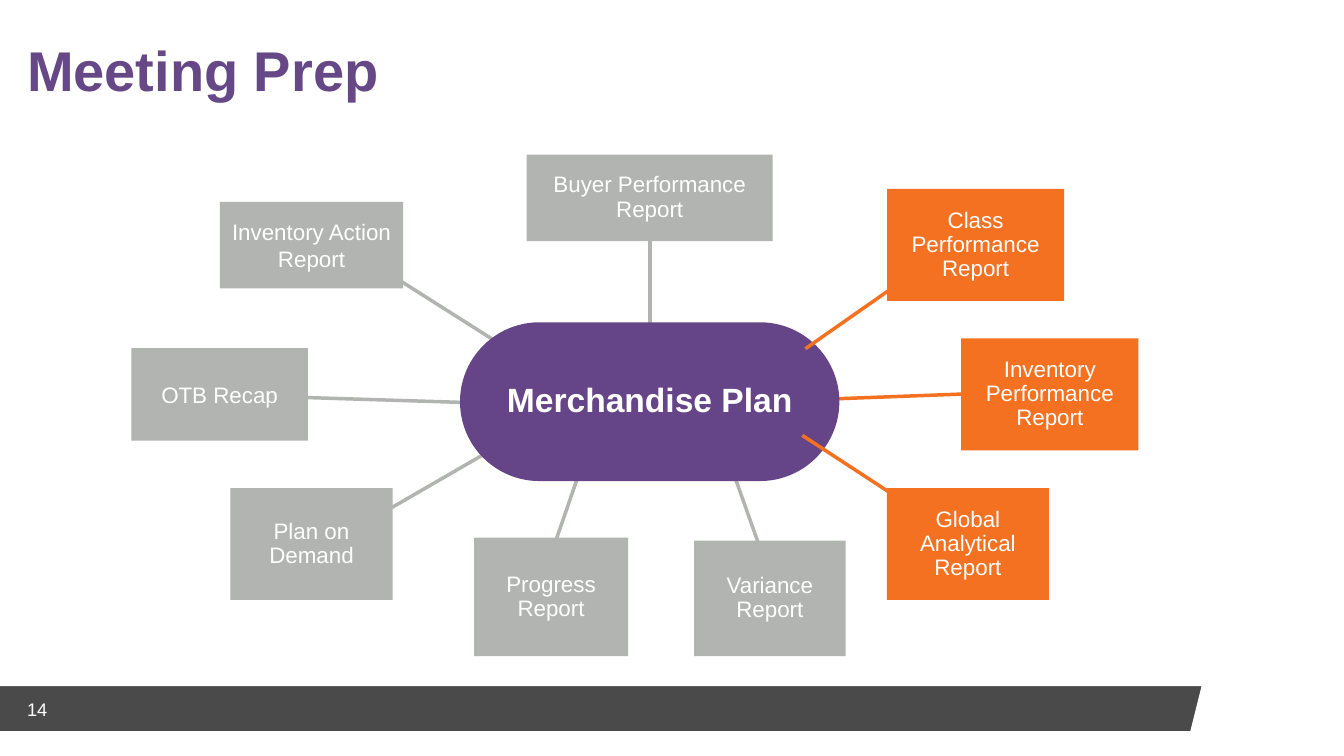
import pptx
import pptx.util
import pptx.dml.color
import pptx.enum.shapes
import pptx.enum.text
import pptx.oxml

Pt = pptx.util.Pt
RGBColor = pptx.dml.color.RGBColor
SHAPE = pptx.enum.shapes.MSO_SHAPE
ALIGN = pptx.enum.text.PP_ALIGN
ANCHOR = pptx.enum.text.MSO_ANCHOR

TITLE_PURPLE = RGBColor(0x66, 0x48, 0x87)
PLAN_PURPLE = RGBColor(0x65, 0x45, 0x87)
ORANGE = RGBColor(0xF3, 0x71, 0x20)
GREY = RGBColor(0xB1, 0xB4, 0xB1)
DARK = RGBColor(0x4A, 0x4A, 0x4A)
WHITE = RGBColor(0xFF, 0xFF, 0xFF)

# Connector ends: x1, y1, x2, y2
GREY_SPOKES = [
    (267, 188.6, 361.4, 248.4),
    (210.2, 283.7, 348.5, 288),
    (255.6, 376.6, 352.8, 320.4),
    (392.4, 399.6, 414, 337),
    (545.8, 399.6, 525.6, 342.7),
    (464.4, 152.6, 464.4, 248.4),
]
ORANGE_SPOKE_BEHIND = (686.9, 281.5, 591.1, 285.1)
ORANGE_SPOKES_FRONT = [
    (643.7, 357.1, 573.1, 311),
    (649.4, 197.3, 575.3, 249.1),
]

# Report boxes: text, colour, (left, top, width, height), line spacing
REPORTS = [
    ("Class Performance Report", ORANGE, (633.6, 135, 126.5, 80), 0.9),
    ("Inventory Performance Report", ORANGE, (686.6, 241.8, 126.5, 80), 0.9),
    ("Global Analytical Report", ORANGE, (633.6, 348.6, 115.6, 80), 0.9),
    ("Variance Report", GREY, (495.8, 386.2, 108.2, 82.6), 0.9),
    ("Progress Report", GREY, (338.6, 384.1, 110, 84.7), 0.9),
    ("Plan on Demand", GREY, (164.6, 348.6, 115.8, 80), 0.9),
    ("Buyer Performance Report", GREY, (376.2, 110.4, 175.8, 61.8), 0.9),
    ("Inventory Action Report", GREY, (157, 144.3, 131, 61.8), 1.0),
    ("OTB Recap", GREY, (93.8, 248.6, 126.2, 66.2), 1.0),
]


def write_text(shape, text, size=16, color=WHITE, bold=False, align=ALIGN.CENTER,
               anchor=ANCHOR.MIDDLE, spacing=0.9, insets=(7.2, 7.2, 7.2, 7.2)):
    frame = shape.text_frame
    frame.word_wrap = True
    frame.auto_size = pptx.enum.text.MSO_AUTO_SIZE.NONE
    frame.vertical_anchor = anchor
    (frame.margin_left, frame.margin_top,
     frame.margin_right, frame.margin_bottom) = [Pt(inset) for inset in insets]
    paragraph = frame.paragraphs[0]
    paragraph.alignment = align
    paragraph.line_spacing = spacing
    run = paragraph.add_run()
    run.text = text
    run.font.name = "Arial"
    run.font.size = Pt(size)
    run.font.bold = bold
    run.font.color.rgb = color


class SlideBuilder:
    def __init__(self, presentation):
        self.slide = presentation.slides.add_slide(presentation.slide_layouts[5])
        self.shapes = self.slide.shapes

    def title(self, text, bounds):
        title = self.shapes.title
        title.left, title.top, title.width, title.height = map(Pt, bounds)
        write_text(title, text, size=40, color=TITLE_PURPLE, bold=True,
                   align=ALIGN.LEFT, anchor=ANCHOR.BOTTOM, insets=(0, 0, 0, 7.2))

    def block(self, kind, bounds, fill, adjustment=None):
        shape = self.shapes.add_shape(kind, *map(Pt, bounds))
        shape.shadow.inherit = False
        shape.fill.solid()
        shape.fill.fore_color.rgb = fill
        shape.line.fill.background()
        if adjustment is not None:
            shape.adjustments[0] = adjustment
        return shape

    def label(self, text, bounds, **text_format):
        box = self.shapes.add_textbox(*map(Pt, bounds))
        write_text(box, text, **text_format)

    def spoke(self, ends, color):
        connector = self.shapes.add_connector(
            pptx.enum.shapes.MSO_CONNECTOR.STRAIGHT, *map(Pt, ends))
        connector.line.color.rgb = color
        connector.line.width = Pt(2.5)
        properties = connector._element.spPr
        properties.append(pptx.oxml.parse_xml(
            '<a:effectLst xmlns:a="http://schemas.openxmlformats.org/drawingml/2006/main"/>'))


def main():
    presentation = pptx.Presentation()
    presentation.slide_width = Pt(960)
    presentation.slide_height = Pt(540)
    builder = SlideBuilder(presentation)

    # Title and footer
    builder.title("Meeting Prep", (19.4, 30.2, 260.6, 51.1))
    bar = builder.block(SHAPE.PARALLELOGRAM, (-15.1, 489.6, 874, 33.1), DARK, 0.25)
    bar.line.color.rgb = WHITE
    bar.line.width = Pt(1)
    builder.label("14", (19.4, 493.2, 39.6, 26.6), size=13, align=ALIGN.LEFT,
                  spacing=1.0, insets=(0, 0, 0, 0))

    # Spokes behind the hub
    for ends in GREY_SPOKES:
        builder.spoke(ends, GREY)
    builder.spoke(ORANGE_SPOKE_BEHIND, ORANGE)

    # Hub
    hub = builder.block(SHAPE.ROUNDED_RECTANGLE, (328.6, 230.2, 271, 113.4), PLAN_PURPLE, 0.5)
    write_text(hub, "Merchandise Plan", size=24, bold=True)

    # Spokes over the hub
    for ends in ORANGE_SPOKES_FRONT:
        builder.spoke(ends, ORANGE)

    # Reports
    for text, color, bounds, spacing in REPORTS:
        box = builder.block(SHAPE.RECTANGLE, bounds, color)
        write_text(box, text, spacing=spacing)

    presentation.save("out.pptx")


if __name__ == "__main__":
    main()
